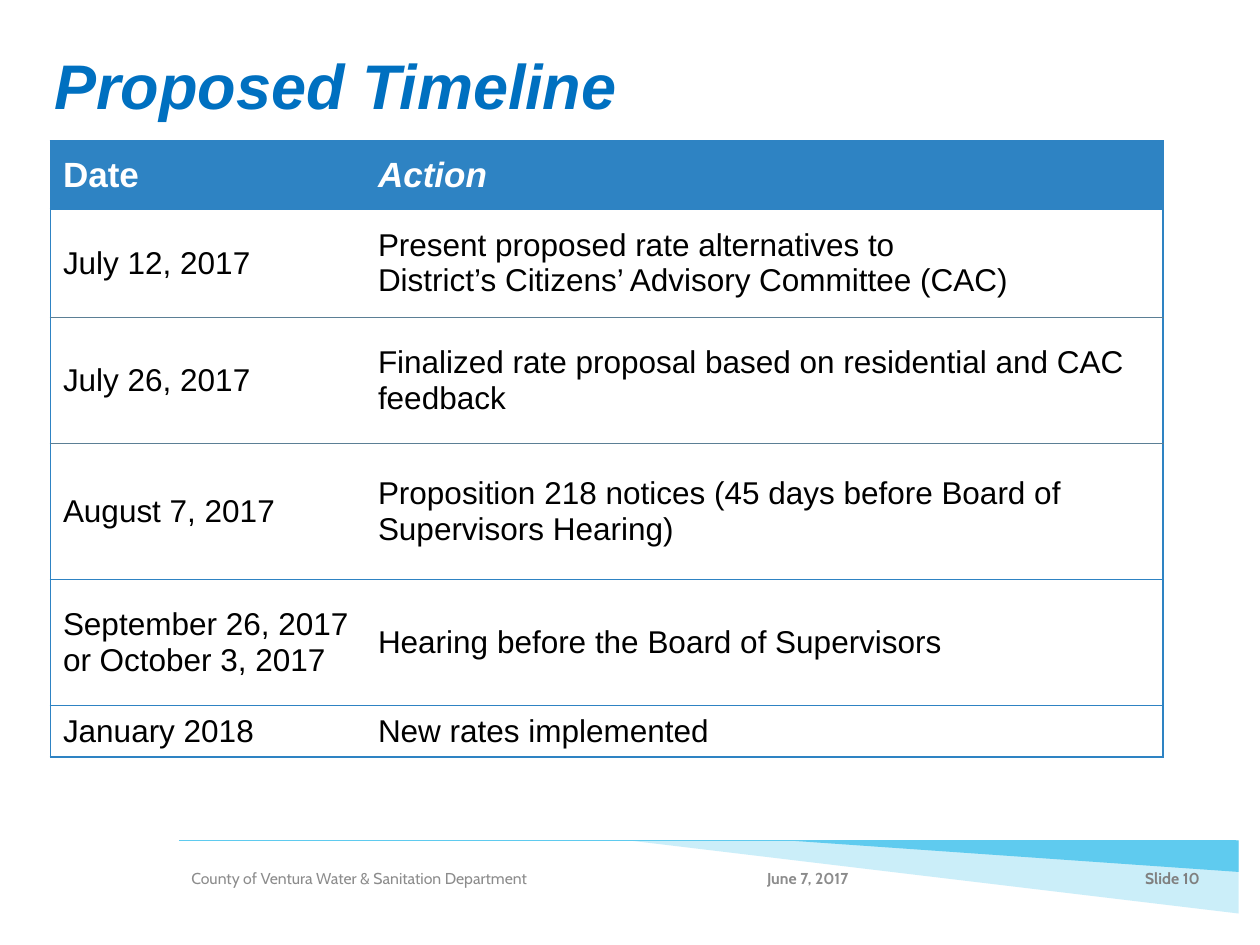
import pptx
import pptx.util
import pptx.dml.color
import pptx.enum.shapes
import pptx.enum.text
import pptx.oxml
import pptx.oxml.ns
from lxml import etree

Inches = pptx.util.Inches
Pt = pptx.util.Pt
ALIGN = pptx.enum.text.PP_ALIGN
ANCHOR = pptx.enum.text.MSO_ANCHOR
SHAPE = pptx.enum.shapes.MSO_SHAPE

COLORS = {
    "title": "0070C0",
    "table": "2E83C3",
    "divider": "5B7F95",
    "header": "FFFFFF",
    "body": "000000",
    "accent": "5FCBEF",
    "footer": "8C8C8C",
    "number": "808080",
}

TIMELINE = [
    ("Date", "Action", 0.54),
    ("July 12, 2017",
     "Present proposed rate alternatives to\vDistrict’s Citizens’ Advisory Committee (CAC)", 0.86),
    ("July 26, 2017",
     "Finalized rate proposal based on residential and CAC feedback", 1),
    ("August 7, 2017",
     "Proposition 218 notices (45 days before Board of Supervisors Hearing)", 1.08),
    ("September 26, 2017 or October 3, 2017", "Hearing before the Board of Supervisors", 1),
    ("January 2018", "New rates implemented", 0.41),
]
COLUMN_WIDTHS = (2.5, 6.33)


def rgb(name):
    return pptx.dml.color.RGBColor.from_string(COLORS[name])


def sub(parent, tag, **attributes):
    return etree.SubElement(parent, pptx.oxml.ns.qn(tag), attributes)


def format_font(font, color, **values):
    font.color.rgb = rgb(color)
    for name, value in values.items():
        setattr(font, name, value)


def add_text(slide, box, text, align, color, frame_format, **font_values):
    frame = slide.shapes.add_textbox(*map(Inches, box)).text_frame
    for name, value in frame_format.items():
        setattr(frame, name, value)
    paragraph = frame.paragraphs[0]
    paragraph.text = text
    paragraph.alignment = align
    format_font(paragraph.font, color, **font_values)


def add_title(slide, box):
    add_text(slide, box, "Proposed Timeline", ALIGN.CENTER, "title",
             {"word_wrap": True, "auto_size": pptx.enum.text.MSO_AUTO_SIZE.SHAPE_TO_FIT_TEXT},
             name="Arial", size=Pt(36), bold=True, italic=True)


def set_borders(cell, borders):
    properties = cell._tc.get_or_add_tcPr()
    for index, side in enumerate(("L", "R", "T", "B")):
        color, width = borders.get(side, (None, 0))
        line = sub(properties, f"a:ln{side}", w=str(Pt(width)))
        properties.insert(index, line)
        if color:
            sub(sub(line, "a:solidFill"), "a:srgbClr", val=COLORS[color])
        else:
            sub(line, "a:noFill")


def add_timeline(slide, box):
    table = slide.shapes.add_table(
        len(TIMELINE), len(COLUMN_WIDTHS), *map(Inches, box)).table
    table.horz_banding = False
    for column, width in zip(table.columns, COLUMN_WIDTHS):
        column.width = Inches(width)

    edge, thin = ("table", 1), ("divider", 0.5)
    rules = [edge, edge, thin, thin, edge, edge, edge]
    for row, (date, action, height) in enumerate(TIMELINE):
        table.rows[row].height = Inches(height)
        is_header = row == 0
        for column, text in enumerate((date, action)):
            cell = table.cell(row, column)
            cell.text = text
            cell.vertical_anchor = ANCHOR.MIDDLE
            if is_header:
                cell.fill.solid()
                cell.fill.fore_color.rgb = rgb("table")
            else:
                cell.fill.background()
            format_font(cell.text_frame.paragraphs[0].font,
                        "header" if is_header else "body",
                        name="Arial", size=Pt(20 if is_header else 18),
                        bold=is_header, italic=is_header and column == 1)
            outer_side = "L" if column == 0 else "R"
            set_borders(cell, {outer_side: edge, "T": rules[row], "B": rules[row + 1]})


def add_footer_art(slide, box):
    left, top, width, height = box
    right = left + width
    rule = slide.shapes.add_connector(
        pptx.enum.shapes.MSO_CONNECTOR.STRAIGHT,
        Inches(left), Inches(top), Inches(right - 0.02), Inches(top))
    rule.line.color.rgb = rgb("accent")
    rule.line.width = Pt(1)
    sub(rule._element.spPr, "a:effectLst")

    for wedge_width, wedge_height, opacity in ((4.84, height, 32), (3.58, 0.25, 100)):
        wedge = slide.shapes.add_shape(
            SHAPE.RIGHT_TRIANGLE, Inches(right - wedge_width), Inches(top),
            Inches(wedge_width), Inches(wedge_height))
        wedge.rotation = 180
        wedge.shadow.inherit = False
        wedge.fill.solid()
        wedge.fill.fore_color.rgb = rgb("accent")
        wedge.line.fill.background()
        if opacity < 100:
            color = wedge._element.spPr.find(".//" + pptx.oxml.ns.qn("a:srgbClr"))
            sub(color, "a:alpha", val=str(opacity * 1000))


def add_footer_text(slide, box):
    left, top, width, height = box
    labels = [
        ("June 7, 2017", 3.82, 2.34, ALIGN.CENTER, "footer", True),
        ("County of Ventura Water & Sanitation Department", 0, 3.58, ALIGN.LEFT, "footer", False),
        ("Slide 10", width - 0.79, 0.79, ALIGN.RIGHT, "number", True),
    ]
    for text, offset, label_width, align, color, bold in labels:
        add_text(slide, (left + offset, top, label_width, height), text, align, color,
                 {"word_wrap": True, "vertical_anchor": ANCHOR.MIDDLE},
                 name="Cabin", size=Pt(9), bold=bold)


def main():
    presentation = pptx.Presentation()
    presentation.slide_width = Inches(10)
    presentation.slide_height = Inches(7.5)
    slide = presentation.slides.add_slide(presentation.slide_layouts[6])
    add_footer_art(slide, (1.42, 6.67, 8.41, 0.58))
    add_footer_text(slide, (1.42, 6.77, 8.2, 0.4))
    add_title(slide, (-1.42, 0.32, 8.17, 0.71))
    add_timeline(slide, (0.4, 1.12, 8.83, 4.89))
    presentation.save("out.pptx")


if __name__ == "__main__":
    main()
